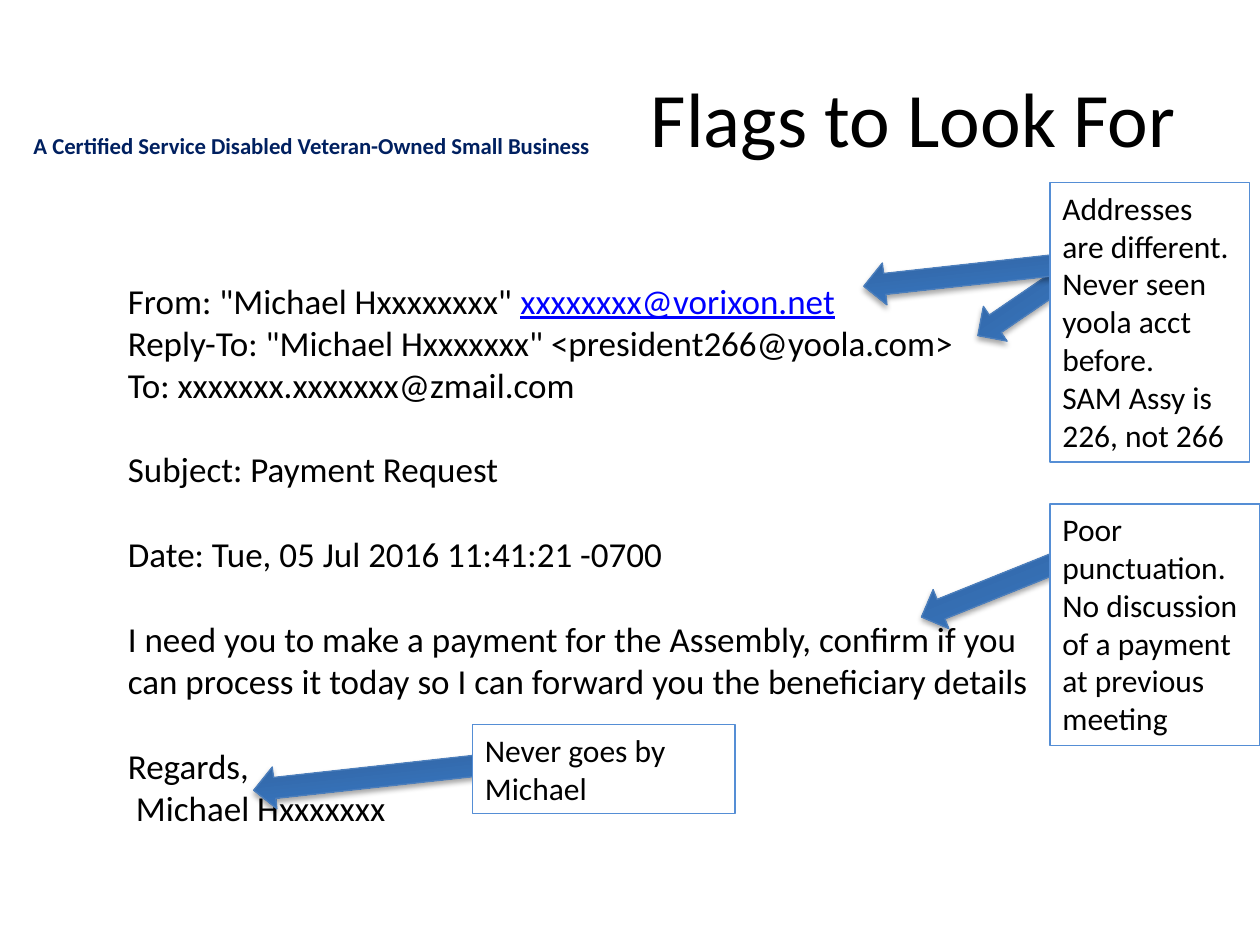
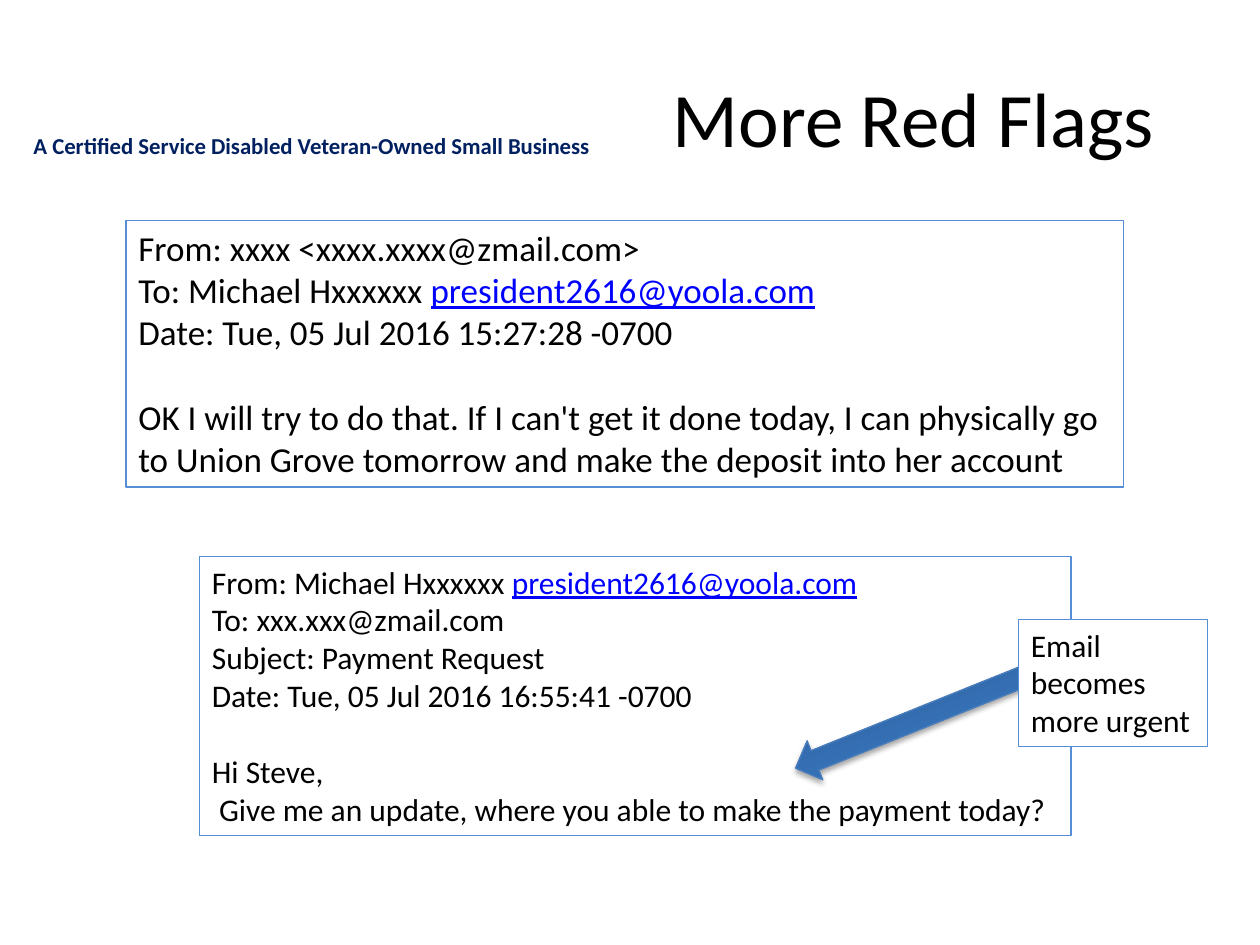
"""Builds two slides that point out the warning signs in a fraudulent e-mail."""
import pptx
import pptx.util
import pptx.dml.color
import pptx.enum.shapes
import pptx.enum.text
import lxml.etree

COLS, ROWS = 120, 90
FONT = "Calibri"
NAVY, BLACK, WHITE, LINK = "002060", "000000", "FFFFFF", "0000FF"
EDGE, DARK, LIGHT, RIM = "558ED5", "2F5F99", "3A7CCB", "4B7EBC"
SHADE = (
    '<a:outerShdw xmlns:a="http://schemas.openxmlformats.org/drawingml/2006/main"'
    ' blurRad="40000" dist="23000" dir="5400000" rotWithShape="0">'
    '<a:srgbClr val="000000"><a:alpha val="35000"/></a:srgbClr></a:outerShdw>'
)

deck = pptx.Presentation()
deck.slide_width = pptx.util.Inches(10)
deck.slide_height = pptx.util.Inches(7.5)
cell = deck.slide_width / COLS
kinds = pptx.enum.shapes.MSO_SHAPE


def hue(code):
    return pptx.dml.color.RGBColor.from_string(code)


def box(slide, place, lines, size, edge=None, tint=BLACK, bold=False, fill=True):
    """Add a text box; an empty line opens a gap, a bar starts a link, a leading space indents."""
    shape = slide.shapes.add_textbox(*[round(n * cell) for n in place])
    if fill:
        shape.fill.solid()
        shape.fill.fore_color.rgb = hue(WHITE)
    if edge:
        shape.line.color.rgb = hue(edge)
        shape.line.width = pptx.util.Pt(0.75)
    frame = shape.text_frame
    frame.word_wrap = True
    para, gap = None, False
    for line in lines:
        if not line:
            gap = True
            continue
        para = frame.add_paragraph() if para is not None else frame.paragraphs[0]
        plain, bar, link = line.partition("|")
        para.text = plain.lstrip()
        if plain.startswith(" "):
            para._p.get_or_add_pPr().set("marL", str(pptx.util.Pt(size * 0.23)))
        if gap:
            para.space_before = pptx.util.Pt(size * 1.22)
            gap = False
        if bar:
            para.add_run().text = link
        for run in para.runs:
            run.font.name = FONT
            run.font.size = pptx.util.Pt(size)
            run.font.bold = bold
            run.font.color.rgb = hue(tint)
        if bar:
            run.font.underline = True
            run.font.color.rgb = hue(LINK)
    return shape


first = [
    'From: "Michael Hxxxxxxxx" |xxxxxxxx@vorixon.net',
    'Reply-To: "Michael Hxxxxxxx" <president266@yoola.com>',
    "To: xxxxxxx.xxxxxxx@zmail.com",
    "",
    "Subject: Payment Request",
    "",
    "Date: Tue, 05 Jul 2016 11:41:21 -0700",
    "",
    "I need you to make a payment for the Assembly, confirm if you can process it "
    "today so I can forward you the beneficiary details",
    "",
    "Regards,",
    " Michael Hxxxxxxx",
]
reply = [
    "From: xxxx <xxxx.xxxx@zmail.com>",
    "To: Michael Hxxxxxx |president2616@yoola.com",
    "Date: Tue, 05 Jul 2016 15:27:28 -0700",
    "",
    "OK I will try to do that. If I can't get it done today, I can physically go to "
    "Union Grove tomorrow and make the deposit into her account",
]
urgent = [
    "From: Michael Hxxxxxx |president2616@yoola.com",
    "To: xxx.xxx@zmail.com",
    "Subject: Payment Request",
    "Date: Tue, 05 Jul 2016 16:55:41 -0700",
    "",
    "Hi Steve,",
    " Give me an update, where you able to make the payment today?",
]

pages = [
    {
        "title": "Flags to Look For",
        "mails": [((11, 26, 91, 53.8), first, 20, None)],
        "arrows": [
            (92, 26.3, 13, 145.7),
            (82.2, 24.1, 21.2, 173.7),
            (24.1, 72.1, 21.2, 173.7),
            (86.9, 52.3, 23.9, 158.1),
        ],
        "notes": [
            ((100, 17.4, 19, 26.6), ["Addresses are different. Never seen yoola acct before.",
                                     "SAM Assy is 226, not 266"]),
            ((45, 69, 25, 8.5), ["Never goes by Michael"]),
            ((100, 48, 20, 23), ["Poor punctuation. No discussion of a payment at previous meeting"]),
        ],
    },
    {
        "title": "More Red Flags",
        "mails": [
            ((12, 21, 95, 25.4), reply, 20, EDGE),
            ((19, 53, 83, 26.6), urgent, 18, EDGE),
        ],
        "arrows": [(74.9, 66.7, 23.9, 158.1)],
        "notes": [((97, 59, 18, 12.1), ["Email becomes more urgent"])],
    },
]

for page in pages:
    slide = deck.slides.add_slide(deck.slide_layouts[6])
    tag = box(slide, (2, 12, 55.6, 3.8),
              ["A Certified Service Disabled Veteran-Owned Small Business"],
              13, tint=NAVY, bold=True, fill=False)
    tag.text_frame.word_wrap = False
    title = box(slide, (60, 3.6, 54, 15), [page["title"]], 44, fill=False)
    title.text_frame.vertical_anchor = pptx.enum.text.MSO_ANCHOR.MIDDLE
    title.text_frame.paragraphs[0].alignment = pptx.enum.text.PP_ALIGN.CENTER

    for place, lines, size, edge in page["mails"]:
        box(slide, place, lines, size, edge)

    for left, top, width, turn in page["arrows"]:
        spot = [round(n * cell) for n in (left, top, width, 4)]
        arrow = slide.shapes.add_shape(kinds.RIGHT_ARROW, *spot)
        arrow.rotation = turn
        arrow.fill.gradient()
        arrow.fill.gradient_angle = 90
        for stop, code in zip(arrow.fill.gradient_stops, (DARK, LIGHT)):
            stop.color.rgb = hue(code)
        arrow.fill.gradient_stops[0].position = 0
        arrow.fill.gradient_stops[1].position = 1
        arrow.line.color.rgb = hue(RIM)
        arrow.line.width = pptx.util.Pt(0.75)
        arrow.shadow.inherit = False
        arrow._element.spPr.find(".//{*}effectLst").append(lxml.etree.fromstring(SHADE))

    for place, lines in page["notes"]:
        box(slide, place, lines, 18, EDGE)

deck.save("out.pptx")
